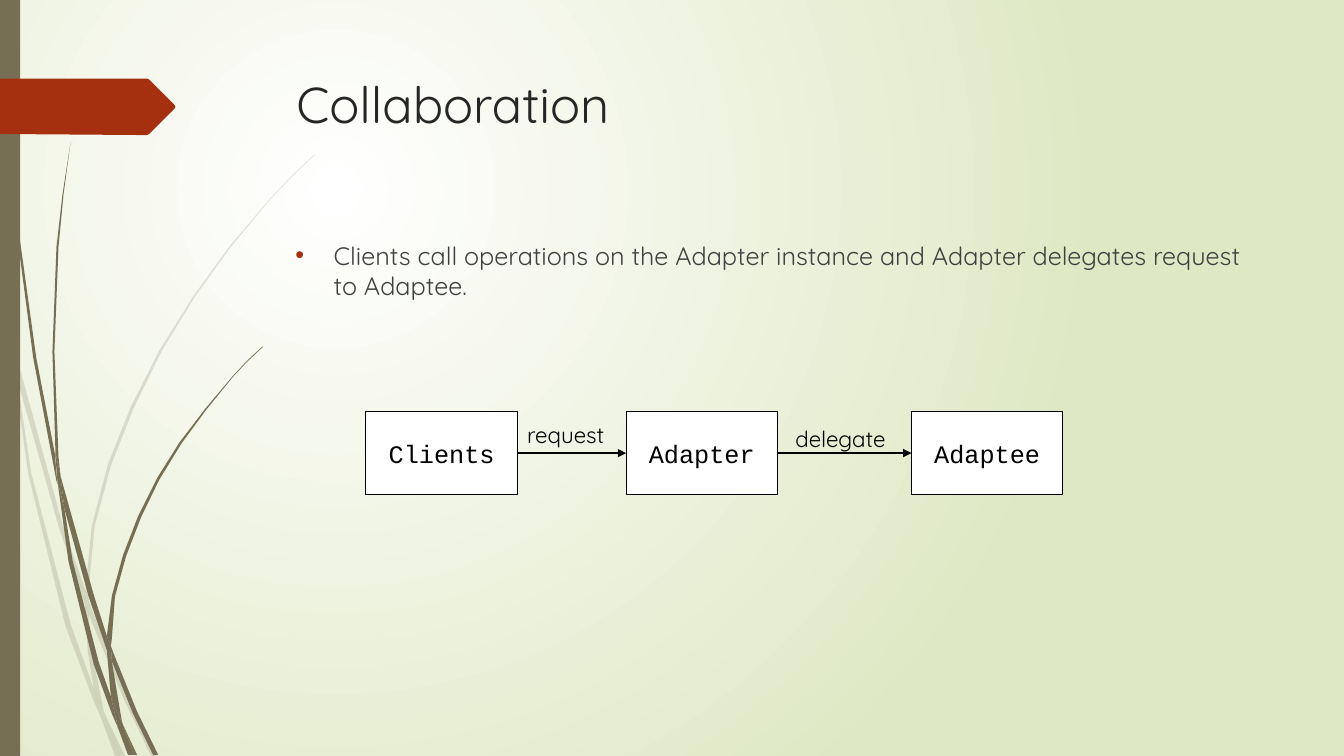
from dataclasses import dataclass

from lxml.etree import SubElement
from pptx import Presentation
from pptx.dml.color import RGBColor
from pptx.enum.shapes import MSO_CONNECTOR as Connector, MSO_SHAPE as Preset
from pptx.enum.text import MSO_ANCHOR as Anchor, MSO_AUTO_SIZE as Fit, PP_ALIGN as Align
from pptx.oxml.ns import qn
from pptx.util import Inches, Pt


@dataclass(frozen=True)
class Theme:
    paper: str = "FFFFFF"
    mist: str = "DFE8C4"
    stem: str = "766F54"
    accent: str = "A53010"
    heading: str = "262626"
    body: str = "404040"
    ink: str = "000000"
    font: str = "Quicksand"
    code_font: str = "Courier New"
    title_size: int = 36
    body_size: int = 18
    label_size: int = 16


def rgb(value):
    return RGBColor.from_string(value)


def write(frame, text, *, font, size, color, align=Align.LEFT, anchor=Anchor.TOP,
          wrap=True, fit=Fit.NONE, before=0):
    """Fill a text frame with one formatted paragraph."""
    frame.word_wrap, frame.auto_size, frame.vertical_anchor = wrap, fit, anchor
    paragraph = frame.paragraphs[0]
    paragraph.alignment, paragraph.space_before = align, Pt(before)
    run = paragraph.add_run()
    run.text = text
    run.font.name, run.font.size = font, Pt(size)
    run.font.color.rgb = rgb(color)
    return paragraph


class SlideBuilder:
    def __init__(self, slide, theme):
        self.slide, self.theme, self.shapes = slide, theme, slide.shapes

    def background(self):
        fill = self.slide.background.fill
        fill.gradient()
        for stop, color in zip(fill.gradient_stops, (self.theme.paper, self.theme.mist)):
            stop.color.rgb = rgb(color)
        gradient = self.slide.element.find(".//" + qn("a:gradFill"))
        gradient.remove(gradient.find(qn("a:lin")))
        circle = SubElement(gradient, qn("a:path"), path="circle")
        SubElement(circle, qn("a:fillToRect"), l="50000", t="50000", r="100000", b="100000")

    def paint(self, shape, color, outline=None, opacity=100):
        shape.shadow.inherit = False
        shape.fill.solid()
        shape.fill.fore_color.rgb = rgb(color)
        if opacity < 100:
            solid = shape.element.spPr.find(qn("a:solidFill"))
            SubElement(solid[0], qn("a:alpha"), val=str(opacity * 1000))
        if outline:
            shape.line.color.rgb, shape.line.width = rgb(outline), Pt(0.75)
        else:
            shape.line.fill.background()
        return shape

    def outline(self, points, color, opacity=100):
        start, *rest = [(Inches(x), Inches(y)) for x, y in points]
        builder = self.shapes.build_freeform(*start, scale=1.0)
        builder.add_line_segments(rest, close=True)
        return self.paint(builder.convert_to_shape(), color, opacity=opacity)

    def rectangle(self, left, top, width, height, color, outline=None):
        place = map(Inches, (left, top, width, height))
        return self.paint(self.shapes.add_shape(Preset.RECTANGLE, *place), color, outline)

    def placeholder(self, index, left, top, width, height):
        holder = self.slide.placeholders[index]
        holder.left, holder.top = Inches(left), Inches(top)
        holder.width, holder.height = Inches(width), Inches(height)
        return holder.text_frame

    def title(self, text, *place):
        write(self.placeholder(0, *place), text, font=self.theme.font,
              size=self.theme.title_size, color=self.theme.heading)

    def bullet(self, text, *place):
        paragraph = write(self.placeholder(1, *place), text, font=self.theme.font,
                          size=self.theme.body_size, color=self.theme.body, before=10)
        props = paragraph._p.get_or_add_pPr()
        props.set("marL", str(Inches(0.38)))
        props.set("indent", str(Inches(-0.38)))
        SubElement(SubElement(props, qn("a:buClr")), qn("a:srgbClr"), val=self.theme.accent)
        SubElement(props, qn("a:buFont"), typeface="Arial")
        SubElement(props, qn("a:buChar"), char="•")

    def role(self, text, left):
        box = self.rectangle(left, 4.08, 1.5, 0.83, self.theme.paper, self.theme.ink)
        write(box.text_frame, text, font=self.theme.code_font, size=self.theme.body_size,
              color=self.theme.ink, align=Align.CENTER, anchor=Anchor.MIDDLE, wrap=False)
        return box

    def arrow(self, sender, receiver):
        call = self.shapes.add_connector(Connector.STRAIGHT, 0, 0, 0, 0)
        call.begin_connect(sender, 3)
        call.end_connect(receiver, 1)
        call.line.color.rgb, call.line.width = rgb(self.theme.ink), Pt(1.5)
        SubElement(call.line._get_or_add_ln(), qn("a:tailEnd"), type="triangle")
        SubElement(call.element.spPr, qn("a:effectLst"))

    def label(self, text, left, top, width):
        box = self.shapes.add_textbox(*map(Inches, (left, top, width, 0.37)))
        write(box.text_frame, text, font=self.theme.font, size=self.theme.label_size,
              color=self.theme.ink, fit=Fit.SHAPE_TO_FIT_TEXT)


# Grass blades, as outline points in inches
PALE_BLADES = [
    [(0.11, 3.5), (0.09, 3.22), (0, 2.82), (0, 2.99), (0.1, 3.44)],
    [(0.58, 5.22), (0.84, 5.99), (0.85, 5.86), (0.62, 5.2), (0.14, 3.45), (0.17, 3.76)],
    [(0.92, 6.07), (0.88, 5.96), (0.88, 6.1), (1.23, 6.94), (1.5, 7.5), (1.55, 7.5),
     (1.27, 6.92)],
    [(1.19, 7.5), (1.24, 7.5), (1.05, 7.11)],
    [(0.93, 6.83), (0.7, 6.19), (0.31, 4.69), (0.17, 3.76), (0.11, 3.5), (0.28, 4.7),
     (0.65, 6.21), (0.92, 6.93), (1.01, 7.14), (0.99, 7.07)],
    [(0.84, 5.99), (0.87, 6.46), (0.93, 6.83), (0.96, 6.92), (1.05, 7.11), (1.03, 7.06),
     (0.91, 6.46), (0.88, 6.1), (0.88, 6.08)],
    [(0.88, 5.84), (0.94, 5.22), (1.1, 4.62), (1.33, 4.04), (1.6, 3.49), (1.93, 2.95),
     (2.29, 2.45), (2.68, 1.98), (2.9, 1.75), (3.12, 1.54), (3.12, 1.53), (2.89, 1.75),
     (2.68, 1.97), (2.28, 2.44), (1.91, 2.95), (1.58, 3.48), (1.3, 4.03), (1.07, 4.61),
     (0.91, 5.22), (0.85, 5.84), (0.85, 5.86), (0.88, 5.96)],
    [(1.01, 7.14), (1.14, 7.5), (1.19, 7.5)],
    [(0.88, 6.08), (0.88, 6.1), (0.88, 5.96), (0.85, 5.86), (0.84, 5.99)],
    [(0.96, 6.92), (0.93, 6.83), (0.99, 7.07), (1.01, 7.14), (1.19, 7.5), (1.05, 7.11)],
]
DARK_BLADES = [
    [(0.07, 1.1), (0.17, 2.33), (0.33, 3.55), (0.56, 4.77), (0.57, 4.81), (0.55, 4.57),
     (0.55, 4.53), (0.36, 3.55), (0.19, 2.32), (0.08, 1.09), (0.05, 0.48), (0.04, 0),
     (0.03, 0), (0.04, 0.48)],
    [(0.88, 5.92), (1.06, 6.45), (1.06, 6.33), (1.06, 6.31), (0.93, 5.9), (0.6, 4.72),
     (0.64, 5.05)],
    [(1.13, 6.49), (1.1, 6.41), (1.11, 6.56), (1.32, 7.08), (1.52, 7.49), (1.57, 7.49),
     (1.36, 7.06)],
    [(1.1, 6.91), (0.98, 6.57), (0.72, 5.56), (0.64, 5.05), (0.57, 4.77), (0.68, 5.57),
     (0.93, 6.59), (1.11, 7.08), (1.17, 7.22), (1.16, 7.17)],
    [(0.6, 4.72), (0.58, 4.53), (0.54, 3.49), (0.58, 2.45), (0.63, 1.93), (0.7, 1.41),
     (0.62, 1.93), (0.56, 2.45), (0.52, 3.49), (0.55, 4.49)],
    [(1.33, 7.49), (1.36, 7.49), (1.22, 7.19)],
    [(0.57, 4.77), (0.64, 5.05), (0.6, 4.72), (0.55, 4.49), (0.55, 4.53)],
    [(1.11, 6.33), (1.14, 5.92), (1.25, 5.52), (1.4, 5.13), (1.58, 4.76), (1.8, 4.4),
     (2.05, 4.06), (2.31, 3.74), (2.45, 3.59), (2.61, 3.44), (2.6, 3.44), (2.45, 3.58),
     (2.31, 3.73), (2.04, 4.05), (1.78, 4.39), (1.56, 4.74), (1.37, 5.12), (1.22, 5.51),
     (1.11, 5.91), (1.06, 6.31), (1.1, 6.41)],
    [(1.17, 7.22), (1.27, 7.49), (1.31, 7.49)],
    [(1.06, 6.45), (1.1, 6.91), (1.16, 7.06), (1.22, 7.19), (1.21, 7.16), (1.11, 6.56),
     (1.09, 6.51)],
    [(1.06, 6.45), (1.09, 6.51), (1.11, 6.56), (1.1, 6.41), (1.06, 6.31), (1.06, 6.33)],
    [(1.16, 7.06), (1.1, 6.91), (1.16, 7.17), (1.17, 7.22), (1.3, 7.49), (1.33, 7.49),
     (1.22, 7.19)],
]
TAG = [(0, 0.78), (1.46, 0.78), (1.48, 0.79), (1.73, 1.04), (1.74, 1.06), (1.73, 1.08),
       (1.48, 1.33), (1.46, 1.34), (1.36, 1.34), (0, 1.33)]


def main():
    deck = Presentation()
    deck.slide_width, deck.slide_height = Inches(13.33), Inches(7.5)
    theme = Theme()
    page = SlideBuilder(deck.slides.add_slide(deck.slide_layouts[1]), theme)

    # Backdrop
    page.background()
    for blades, opacity in ((PALE_BLADES, 20), (DARK_BLADES, 100)):
        for blade in blades:
            page.outline(blade, theme.stem, opacity)
    page.rectangle(0, 0, 0.2, 7.5, theme.stem)
    page.outline(TAG, theme.accent)

    # Title and statement
    page.title("Collaboration", 2.84, 0.68, 9.75, 1.4)
    page.bullet("Clients call operations on the Adapter instance and Adapter delegates "
                "request to Adaptee.", 2.83, 2.33, 9.75, 4.13)

    # Call chain
    clients = page.role("Clients", 3.63)
    adapter = page.role("Adapter", 6.21)
    adaptee = page.role("Adaptee", 9.04)
    page.arrow(clients, adapter)
    page.arrow(adapter, adaptee)
    page.label("request", 5.13, 4.13, 1.08)
    page.label("delegate", 7.79, 4.17, 1.25)

    deck.save("out.pptx")


if __name__ == "__main__":
    main()
